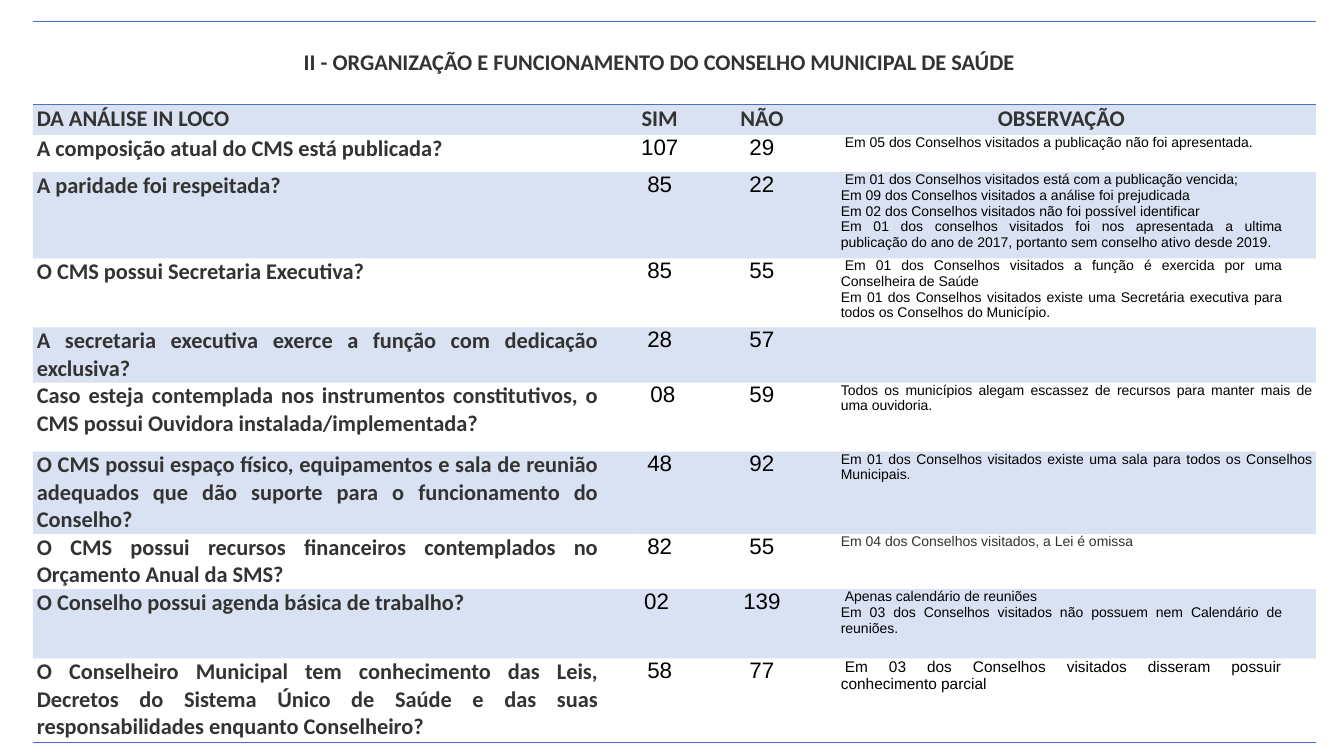
import pptx
import pptx.dml.color
import pptx.enum.text
import pptx.oxml.ns
import pptx.util
from lxml import etree

Cm = pptx.util.Cm
qn = pptx.oxml.ns.qn
ALIGN = pptx.enum.text.PP_ALIGN
CENTER, JUSTIFY = ALIGN.CENTER, ALIGN.JUSTIFY

THEME = {
    "accent": "4472C4", "band_alpha": "20000",
    "heading": "333333", "body": "000000",
    "heading_font": "Calibri", "body_font": "Arial",
    "size": 16, "note_size": 10, "last_note_size": 11,
}
RIGHT_INDENT = 0.76
FIRST_INDENT = 0.1
NUDGE = 0.16
NO_STYLE = "{2D5ABB26-0587-4C30-8999-92F81FD0307C}"

TITLE = "II - ORGANIZAÇÃO E FUNCIONAMENTO DO CONSELHO MUNICIPAL DE SAÚDE"
HEADERS = ["DA ANÁLISE IN LOCO", "SIM", "NÃO", "OBSERVAÇÃO"]

# Row height, question, yes, no, observations
ROWS = [
    (0.94, "A composição atual do CMS está publicada?", "107", "29",
     ["Em 05 dos Conselhos visitados a publicação não foi apresentada."]),
    (2.17, "A paridade foi respeitada?", "85", "22",
     ["Em 01 dos Conselhos visitados está com a publicação vencida;",
      "Em 09 dos Conselhos visitados a análise foi prejudicada",
      "Em 02 dos Conselhos visitados não foi possível identificar",
      "Em 01 dos conselhos visitados foi nos apresentada a ultima publicação "
      "do ano de 2017, portanto sem conselho ativo desde 2019."]),
    (1.74, "O CMS possui Secretaria Executiva?", "85", "55",
     ["Em 01 dos Conselhos visitados a função é exercida por uma "
      "Conselheira de Saúde",
      "Em 01 dos Conselhos visitados existe uma Secretária executiva para "
      "todos os Conselhos do Município."]),
    (1.39, "A secretaria executiva exerce a função com dedicação exclusiva?",
     "28", "57", []),
    (1.74, "Caso esteja contemplada nos instrumentos constitutivos, o CMS "
     "possui Ouvidora instalada/implementada?", "08", "59",
     ["Todos os municípios alegam escassez de recursos para manter mais de "
      "uma ouvidoria."]),
    (2.08, "O CMS possui espaço físico, equipamentos e sala de reunião "
     "adequados que dão suporte para o funcionamento do Conselho?", "48", "92",
     ["Em 01 dos Conselhos visitados existe uma sala para todos os Conselhos "
      "Municipais."]),
    (1.39, "O CMS possui recursos financeiros contemplados no Orçamento Anual "
     "da SMS?", "82", "55",
     ["Em 04 dos Conselhos visitados, a Lei é omissa"]),
    (1.74, "O Conselho possui agenda básica de trabalho?", "02", "139",
     ["Apenas calendário de reuniões",
      "Em 03 dos Conselhos visitados não possuem nem Calendário de reuniões."]),
    (2.12, "O Conselheiro Municipal tem conhecimento das Leis, Decretos do "
     "Sistema Único de Saúde e das suas responsabilidades enquanto "
     "Conselheiro?", "58", "77",
     ["Em 03 dos Conselhos visitados disseram possuir conhecimento parcial"]),
]
# Observations that use the full cell width, start flush, or are grey
FULL_WIDTH_ROWS = (5, 6)
FLUSH_ROWS = (5, 6, 7)
GREY_ROW = 7


def write_cell(cell, lines, align, heading, size=THEME["size"], margin=0.1,
               right=RIGHT_INDENT, left=0, first=0, color=None):
    cell.margin_left = cell.margin_right = Cm(margin)
    cell.margin_top = cell.margin_bottom = 0
    cell.text_frame.text = "\n".join(lines)
    kind = "heading" if heading else "body"
    for index, paragraph in enumerate(cell.text_frame.paragraphs):
        paragraph.alignment = align
        properties = paragraph._p.get_or_add_pPr()
        properties.set("marL", str(Cm(left)))
        properties.set("marR", str(Cm(right)))
        properties.set("indent", str(Cm(first if index == 0 else 0)))
        for run in paragraph.runs:
            run.font.size = pptx.util.Pt(size)
            run.font.name = THEME[kind + "_font"]
            run.font.bold = heading
            run.font.color.rgb = pptx.dml.color.RGBColor.from_string(
                color or THEME[kind])


def add_border(cell, tag):
    line = etree.SubElement(cell._tc.get_or_add_tcPr(), qn(tag), w="12700")
    fill = etree.SubElement(line, qn("a:solidFill"))
    etree.SubElement(fill, qn("a:srgbClr"), val=THEME["accent"])


# Slide
presentation = pptx.Presentation()
presentation.slide_width = Cm(33.87)
presentation.slide_height = Cm(19.05)
slide = presentation.slides.add_slide(presentation.slide_layouts[6])

# Table grid
column_widths = [15.11, 2.13, 3.02, 12.07]
row_heights = [2.09, 0.76] + [row[0] for row in ROWS]
frame = slide.shapes.add_table(
    len(row_heights), len(column_widths), Cm(0.83), Cm(0.55),
    Cm(sum(column_widths)), Cm(sum(row_heights)))
table = frame.table
table.first_row = table.horz_banding = False
table._tbl.tblPr.find(qn("a:tableStyleId")).text = NO_STYLE
for column, width in zip(table.columns, column_widths):
    column.width = Cm(width)
for table_row, height in zip(table.rows, row_heights):
    table_row.height = Cm(height)

# Title row and column headings
title_cell = table.cell(0, 0)
title_cell.merge(table.cell(0, 3))
write_cell(title_cell, [TITLE], CENTER, True)
title_cell.vertical_anchor = pptx.enum.text.MSO_ANCHOR.MIDDLE
for column, header in enumerate(HEADERS):
    write_cell(table.cell(1, column), [header],
               CENTER if column else JUSTIFY, True)

# Questions, counts and observations
for number, (height, question, yes, no, notes) in enumerate(ROWS, 1):
    cells = table.rows[number + 1].cells
    write_cell(cells[0], [question], JUSTIFY, True)
    write_cell(cells[1], [yes], CENTER, False, margin=0.18,
               left=NUDGE if yes == "08" else 0,
               right=RIGHT_INDENT + (NUDGE if yes == "02" else 0))
    write_cell(cells[2], [no], CENTER, False, margin=0.18)
    is_last = number == len(ROWS)
    write_cell(cells[3], notes, JUSTIFY, False,
               size=THEME["last_note_size" if is_last else "note_size"],
               right=0 if number in FULL_WIDTH_ROWS else RIGHT_INDENT,
               first=0 if number in FLUSH_ROWS else FIRST_INDENT,
               color=THEME["heading"] if number == GREY_ROW else None)

# Rules above and below the title and at the foot
for column in range(len(column_widths)):
    add_border(table.cell(0, column), "a:lnT")
    add_border(table.cell(0, column), "a:lnB")
    add_border(table.cell(len(row_heights) - 1, column), "a:lnB")

# Translucent bands on every other row
for row_index, table_row in enumerate(table.rows):
    for cell in table_row.cells:
        if row_index % 2 == 0:
            cell.fill.background()
            continue
        cell.fill.solid()
        cell.fill.fore_color.rgb = pptx.dml.color.RGBColor.from_string(
            THEME["accent"])
        color = cell._tc.tcPr.find(".//" + qn("a:srgbClr"))
        etree.SubElement(color, qn("a:alpha"), val=THEME["band_alpha"])

presentation.save("out.pptx")
